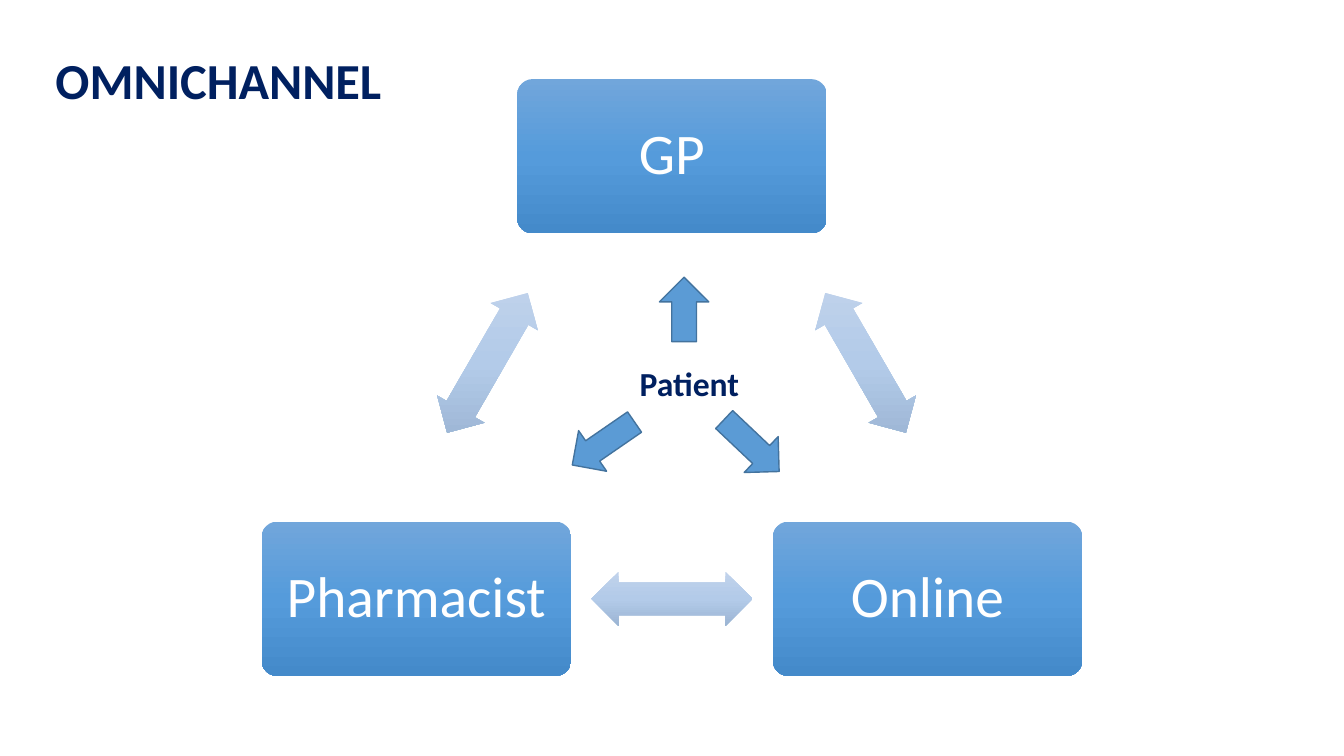
from copy import deepcopy
from math import sqrt

from pptx import Presentation
from pptx.dml.color import RGBColor as RGB
from pptx.enum.shapes import MSO_SHAPE as Kind
from pptx.enum.text import MSO_ANCHOR as Anchor, MSO_AUTO_SIZE as Fit, PP_ALIGN as Align
from pptx.oxml.ns import qn
from pptx.util import Inches, Pt

NAVY = RGB(0x00, 0x20, 0x60)
WHITE = RGB(0xFF, 0xFF, 0xFF)
BLUE = RGB(0x5B, 0x9B, 0xD5)
EDGE = RGB(0x43, 0x73, 0x9E)
BOX_FADE = [RGB(0x71, 0xA6, 0xDB), RGB(0x55, 0x9B, 0xDB), RGB(0x44, 0x8A, 0xCA)]
LINK_FADE = [RGB(0xC0, 0xD2, 0xEB), RGB(0xB3, 0xCB, 0xE9), RGB(0x9B, 0xB4, 0xD3)]

WIDE, HIGH = 13.33, 7.5
BOX = 3.07, 1.53
LINK = 1.6, 0.54
SIDE = 5.07  # distance between box centres


def put(slide, kind, mid, size, turn=0):
    """Add a shape by its centre."""
    (x, y), (w, h) = mid, size
    shape = slide.shapes.add_shape(
        kind, Inches(x - w / 2), Inches(y - h / 2), Inches(w), Inches(h))
    shape.rotation = turn
    shape.shadow.inherit = False
    return shape


def fade(shape, tones):
    """Fill from top to bottom, however the shape is turned."""
    shape.line.fill.background()
    fill = shape.fill
    fill.gradient()
    fill.gradient_angle = 270
    grad = shape._element.spPr.find(qn("a:gradFill"))
    grad.set("rotWithShape", "0")
    stops = grad.find(qn("a:gsLst"))
    stops.append(deepcopy(stops[0]))
    for i, (stop, tone) in enumerate(zip(fill.gradient_stops, tones)):
        stop.color.rgb = tone
        stop.position = i / (len(tones) - 1)


def write(shape, text, size, tone, bold=False, align=Align.LEFT, **frame):
    body = shape.text_frame
    for name, value in frame.items():
        setattr(body, name, value)
    para = body.paragraphs[0]
    para.alignment = align
    run = para.add_run()
    run.text = text
    looks = {"name": "Calibri", "size": Pt(size), "bold": bold}
    for name, value in looks.items():
        setattr(run.font, name, value)
    run.font.color.rgb = tone
    return para


def head(slide, box):
    """Title in the top left corner."""
    title = slide.shapes.title
    for name, value in zip(("left", "top", "width", "height"), box):
        setattr(title, name, Inches(value))
    write(title, "OMNICHANNEL", 36, NAVY, True, word_wrap=True,
          auto_size=Fit.NONE, vertical_anchor=Anchor.TOP)


def ring(slide, x, top):
    """Three channels on an equal-sided triangle, with links between them."""
    low = top + SIDE * sqrt(3) / 2
    inset = Inches(0.1)
    pads = {"margin_" + s: inset for s in ("left", "top", "right", "bottom")}
    for text, mid in (("GP", (x, top)), ("Online", (x + SIDE / 2, low)),
                      ("Pharmacist", (x - SIDE / 2, low))):
        box = put(slide, Kind.ROUNDED_RECTANGLE, mid, BOX)
        box.adjustments[0] = 0.1
        fade(box, BOX_FADE)
        para = write(box, text, 41, WHITE, align=Align.CENTER, word_wrap=True,
                     vertical_anchor=Anchor.MIDDLE, **pads)
        para.line_spacing = 0.9

    rise = top + 2.05
    for mid, turn in (((x + 1.92, rise), 60), ((x, low), 180),
                      ((x - 1.83, rise), 300)):
        link = put(slide, Kind.LEFT_RIGHT_ARROW, mid, LINK, turn)
        link.adjustments[0] = 0.6
        fade(link, LINK_FADE)


def core(slide, x, y):
    """Patient label with arrows out to the channels."""
    label = slide.shapes.add_textbox(
        Inches(x - 0.42), Inches(y - 0.25), Inches(1.69), Inches(0.5))
    write(label, "Patient", 24, NAVY, True, word_wrap=True)
    for dx, dy, long, turn in ((0.12, -0.73, 0.64, 0), (-0.68, 0.6, 0.75, 235.4),
                               (0.79, 0.62, 0.75, 133.4)):
        arrow = put(slide, Kind.UP_ARROW, (x + dx, y + dy), (0.49, long), turn)
        arrow.fill.solid()
        arrow.fill.fore_color.rgb = BLUE
        arrow.line.color.rgb = EDGE
        arrow.line.width = Pt(1)


def main():
    deck = Presentation()
    deck.slide_width, deck.slide_height = Inches(WIDE), Inches(HIGH)
    slide = deck.slides.add_slide(deck.slide_layouts[5])
    head(slide, (0.45, 0.44, 5.67, 0.71))
    ring(slide, WIDE / 2, 1.55)
    core(slide, WIDE / 2, 3.8)
    deck.save("out.pptx")


if __name__ == "__main__":
    main()
